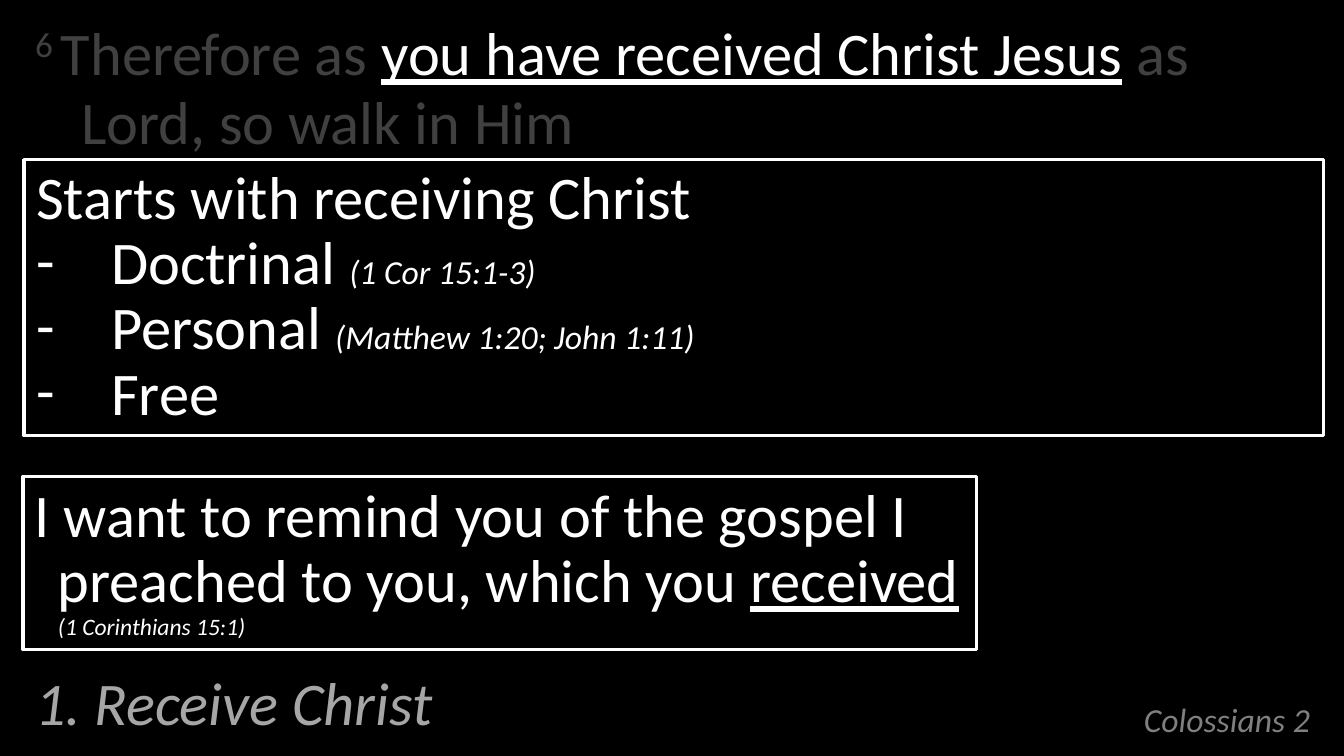
import dataclasses

import pptx
import pptx.dml.color
import pptx.enum.shapes
import pptx.enum.text
import pptx.oxml
import pptx.oxml.ns
import pptx.util

Inches = pptx.util.Inches
Align = pptx.enum.text.PP_ALIGN
Anchor = pptx.enum.text.MSO_ANCHOR


@dataclasses.dataclass(frozen=True)
class Theme:
    font: str = "Calibri"
    black: str = "000000"
    white: str = "FFFFFF"
    dimmed: str = "404040"
    grey: str = "808080"
    light: str = "A6A6A6"
    large: int = 36
    reference: int = 20
    small: int = 14
    border: int = 2
    opacity: int = 60


THEME = Theme()
HANGING = 0.38
BOX_HANGING = 0.19
BULLET_HANGING = 0.62

CHAPTER = [{"spans": [("Colossians 2", {"size": THEME.reference, "color": THEME.grey, "italic": True})],
            "align": Align.RIGHT, "spacing": 0.8}]
VERSE = [{"spans": [("6 ", {"color": THEME.dimmed, "raised": 30}),
                    ("Therefore as ", {"color": THEME.dimmed}),
                    ("you have received Christ Jesus", {"underline": True}),
                    (" as Lord, so walk in Him", {"color": THEME.dimmed})],
          "hanging": HANGING, "spacing": 0.95}]
POINT = [{"spans": [("1. Receive Christ", {"color": THEME.light, "italic": True})],
          "hanging": HANGING, "spacing": 0.95}]
CITATION = {"size": THEME.reference, "italic": True}
RECEIVING = [{"spans": [("Starts with receiving Christ", {})], "hanging": BOX_HANGING}] + [
    {"spans": spans, "hanging": BULLET_HANGING, "bullet": "-"}
    for spans in (
        [("Doctrinal ", {}), ("(1 Cor 15:1-3)", CITATION)],
        [("Personal ", {}), ("(Matthew 1:20; John 1:11)", CITATION)],
        [("Free", {})],
    )
]
GOSPEL = [{"spans": [("I want to remind you of the gospel I preached to you, which you ", {}),
                     ("received", {"underline": True}),
                     (" ", {}),
                     ("(1 Corinthians 15:1)", {"size": THEME.small, "italic": True})],
           "hanging": BOX_HANGING}]

PLACEHOLDERS = [
    (0, (7.06, 5.56, 3.87, 0.6), Anchor.BOTTOM, CHAPTER),
    (1, (0.19, 0.12, 10.74, 5.29), Anchor.TOP, VERSE),
    (2, (0.19, 5.56, 8.12, 0.6), Anchor.BOTTOM, POINT),
]
BOXES = [
    ((0.2, 1.32, 10.74, 2.28), RECEIVING),
    ((0.19, 3.94, 7.88, 1.43), GOSPEL),
]


def rgb(color):
    """Turn a hex string into a colour."""
    return pptx.dml.color.RGBColor.from_string(color)


def add_element(parent, tag, **attributes):
    """Append a drawing element with its attributes."""
    child = pptx.oxml.parse_xml(f"<{tag} {pptx.oxml.ns.nsdecls('a')}/>")
    for name, value in attributes.items():
        child.set(name, value)
    parent.append(child)


def add_span(para, text, size=THEME.large, color=THEME.white, italic=False, underline=False, raised=0):
    """Add one formatted run to a paragraph."""
    span = para.add_run()
    span.text = text
    span.font.name = THEME.font
    span.font.size = pptx.util.Pt(size)
    span.font.color.rgb = rgb(color)
    span.font.italic = italic
    span.font.underline = underline
    if raised:
        span._r.get_or_add_rPr().set("baseline", str(raised * 1000))


def write(frame, paragraphs, anchor):
    """Fill a text frame with formatted paragraphs."""
    frame.word_wrap = True
    frame.auto_size = pptx.enum.text.MSO_AUTO_SIZE.NONE
    frame.vertical_anchor = anchor
    for number, content in enumerate(paragraphs):
        para = frame.add_paragraph() if number else frame.paragraphs[0]
        para.alignment = content.get("align", Align.LEFT)
        para.line_spacing = content.get("spacing", 0.9)
        hanging = Inches(content.get("hanging", 0))
        properties = para._p.get_or_add_pPr()
        properties.set("marL", str(hanging))
        properties.set("indent", str(-hanging))
        if "bullet" in content:
            add_element(properties, "a:buFont", typeface=THEME.font)
            add_element(properties, "a:buChar", char=content["bullet"])
        else:
            add_element(properties, "a:buNone")
        for text, style in content["spans"]:
            add_span(para, text, **style)


def add_box(page, place, paragraphs):
    """Add an outlined, see-through text box."""
    box = page.shapes.add_shape(pptx.enum.shapes.MSO_SHAPE.ROUNDED_RECTANGLE, *map(Inches, place))
    box.adjustments[0] = 0
    box.shadow.inherit = False
    box.fill.solid()
    box.fill.fore_color.rgb = rgb(THEME.black)
    fill_color = box._element.spPr.find(".//" + pptx.oxml.ns.qn("a:srgbClr"))
    add_element(fill_color, "a:alpha", val=str(THEME.opacity * 1000))
    box.line.color.rgb = rgb(THEME.white)
    box.line.width = pptx.util.Pt(THEME.border)
    write(box.text_frame, paragraphs, Anchor.MIDDLE)


def main():
    """Build the slide and save it."""
    deck = pptx.Presentation()
    deck.slide_width, deck.slide_height = Inches(11.11), Inches(6.25)
    page = deck.slides.add_slide(deck.slide_layouts.get_by_name("Two Content"))
    page.background.fill.solid()
    page.background.fill.fore_color.rgb = rgb(THEME.black)
    holders = {holder.placeholder_format.idx: holder for holder in page.placeholders}
    for index, place, anchor, paragraphs in PLACEHOLDERS:
        holder = holders[index]
        holder.left, holder.top, holder.width, holder.height = map(Inches, place)
        write(holder.text_frame, paragraphs, anchor)
    for place, paragraphs in BOXES:
        add_box(page, place, paragraphs)
    deck.save("out.pptx")


if __name__ == "__main__":
    main()
